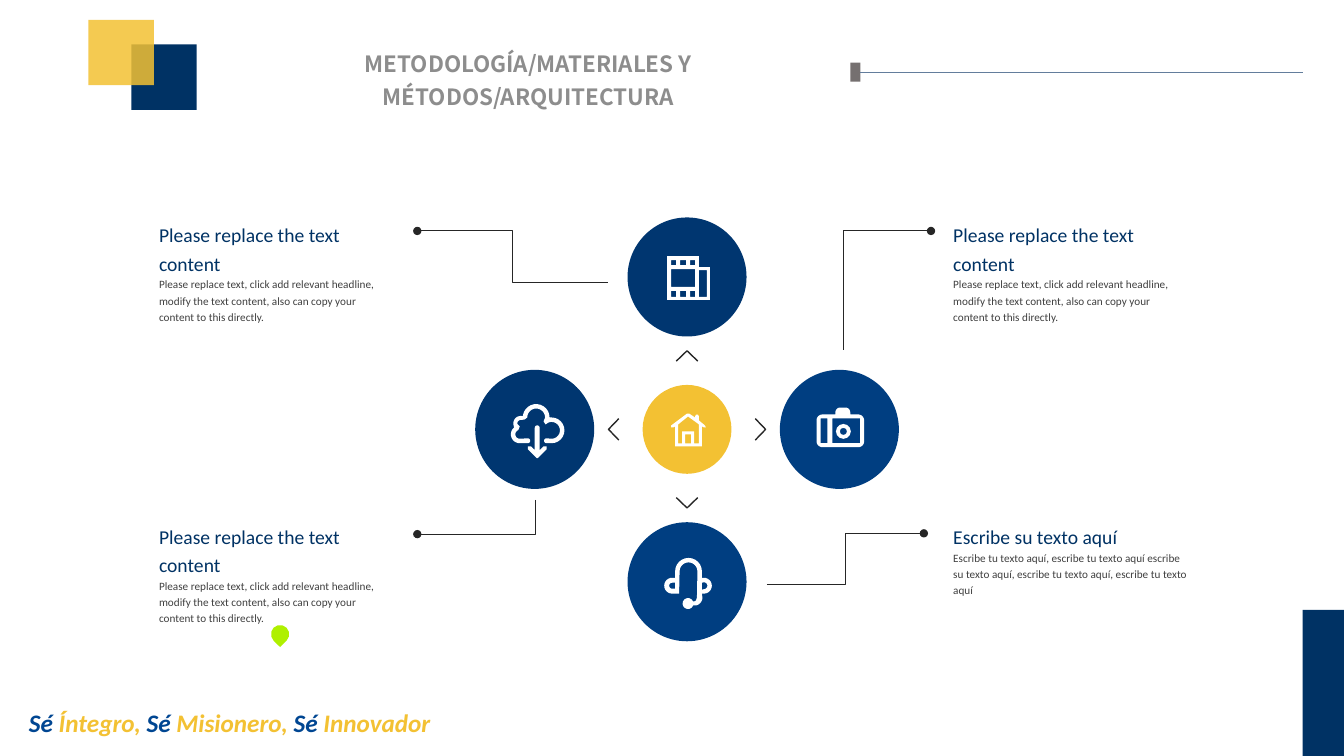
"""Build the methodology slide: a hub, four icon circles and their captions."""
from math import cos, radians, sin

from lxml.etree import SubElement
from pptx import Presentation
from pptx.dml.color import RGBColor
from pptx.enum.shapes import MSO_CONNECTOR, MSO_SHAPE
from pptx.enum.text import PP_ALIGN
from pptx.oxml.ns import qn
from pptx.util import Cm, Pt

NAVY = RGBColor(0x00, 0x32, 0x64)
DEEP = RGBColor(0x00, 0x36, 0x70)
BLUE = RGBColor(0x00, 0x3E, 0x81)
ROYAL = RGBColor(0x00, 0x46, 0x92)
GOLD = RGBColor(0xF3, 0xC1, 0x33)
LIME = RGBColor(0xAF, 0xF0, 0x00)
WHITE = RGBColor(0xFF, 0xFF, 0xFF)
INK = RGBColor(0x26, 0x26, 0x26)
TEXT = RGBColor(0x3F, 0x3F, 0x3F)
GREY = RGBColor(0x8D, 0x8D, 0x8D)
STONE = RGBColor(0x75, 0x70, 0x70)
STEEL = RGBColor(0x63, 0x7D, 0x9C)

TITLE = "METODOLOGÍA/MATERIALES Y MÉTODOS/ARQUITECTURA"
MOTTO = [("Sé", ROYAL), (" Íntegro, ", GOLD), ("Sé", ROYAL),
         (" Misionero, ", GOLD), ("Sé", ROYAL), (" Innovador", GOLD)]
HEAD = "Please replace the text content"
BODY = ("Please replace text, click add relevant headline, modify the text "
        "content, also can copy your content to this directly.")
NOTES = [
    (24.03, 5.51, HEAD, BODY),
    (24.03, 13.11, "Escribe su texto aquí",
     "Escribe tu texto aquí, escribe tu texto aquí escribe su texto aquí, "
     "escribe tu texto aquí, escribe tu texto aquí"),
    (4.01, 13.11, HEAD, BODY),
    (4.01, 5.51, HEAD, BODY),
]
ELBOWS = [
    [(15.32, 7.11), (12.93, 7.11), (12.93, 5.82), (10.52, 5.82)],
    [(21.26, 8.81), (21.26, 5.82), (23.47, 5.82)],
    [(19.33, 14.73), (21.31, 14.73), (21.31, 13.44), (23.29, 13.44)],
    [(13.49, 12.6), (13.49, 13.46), (10.52, 13.46)],
]
MID = (17.32, 10.82)
REACH, RING, HUB = 3.84, 3, 2.24
TIP, BASE, WING = 1.98, 1.72, 0.27


def box(left, top, right, low):
    """Return the corners of a rectangle."""
    return [(left, top), (right, top), (right, low), (left, low)]


# Contours hold points (x, y) and arcs (x, y, radius, from, to) in icon units.
FILM = [[
    [(-20, -21), (12, -21), (12, -10), (23, -10), (23, 23), (-20, 23)],
    box(-16, -8, 8, 10), box(12, -7, 20, 20),
    *[box(left, top, right, low)
      for top, low in [(-17, -12), (14, 20)]
      for left, right in [(-16, -11), (-7, -1), (3, 8)]],
]]
CLOUD = [
    [[(1.5, -12, 13.5, 0, -170), (-14, -6, 7.5, -75, -190),
      (-15, 5, 9, -130, -270), (-7, 11.5, 2.5, 90, -90),
      (-15, 5, 4.5, 90, 250), (-15, -3), (-14, -6, 3.5, 170, 280),
      (-10, -10), (1.5, -12, 9, 180, 360), (9, -8), (11, -5),
      (17, 1, 8.5, -110, 90), (12, 11.5, 2.5, 270, 90),
      (17, 1, 13, 90, -90)]],
    [[(9, 17), (5, 21), (2.5, -1.5, 2.5, 0, -180), (0, 21), (-4, 17),
      (-7, 17), (-7, 20), (2, 29), (3, 29), (12, 20), (12, 17)]],
]
PHONE = [[
    [(1.5, -10.5, 13.5, 0, -180), (-12, -4), (-15, 4, 8, -90, -270),
     (-8, 12), (1.5, -10.5, 9, 180, 360), (10, 16), (9, 19), (7, 20),
     (1, 22, 5.5, -25, -340), (7.5, 16, 8, 80, 0), (15, 12),
     (17, 4, 8, 90, -90), (15, -4)],
    [(-12, 7), (-15, 4, 3, 90, 270), (-12, 1)],
    [(15, 1), (17, 4, 3.5, -90, 90), (15, 8)],
]]
CAMERA = [
    [[(-17, -9, 6, 180, 270), (-4, -15), (1, -17, 5, 180, 270),
      (6, -17, 5, 270, 360), (11, -15), (19, -9, 6, 270, 360),
      (19, 12, 6, 0, 90), (-17, 12, 6, 90, 180)],
     box(-19, -11, -12, 14), box(-7, -11, 21, 14)],
    [[(4, 2, 7.5, 0, 360)], [(4, 2, 3.5, 0, 360)]],
]
HOME = [[
    [(18, -4), (12, -9), (12, -13), (11, -15), (9, -15), (8, -13), (8, -12),
     (2, -16), (0, -16), (-16, -4), (-16, -2), (-14, -2), (-12, -3),
     (-12, 17), (15, 17), (15, -3), (17, -2), (19, -2)],
    [(12, 14), (7, 14), (7, 2), (-5, 2), (-5, 14), (-9, 14), (-9, -5),
     (1, -13), (12, -5)],
    box(-2, 5, 4, 14),
]]
DISCS = [(0, -1, RING, DEEP, FILM), (0, 0, HUB, GOLD, HOME),
         (1, 0, RING, BLUE, CAMERA), (-1, 0, RING, DEEP, CLOUD),
         (0, 1, RING, BLUE, PHONE)]


def add(kind, left, top, wide, high, fill):
    """Add a filled preset shape."""
    item = shapes.add_shape(kind, Cm(left), Cm(top), Cm(wide), Cm(high))
    item.shadow.inherit = False
    item.fill.solid()
    item.fill.fore_color.rgb = fill
    item.line.fill.background()
    return item


def trace(loops, close):
    """Build one freeform from loops of points in centimetres."""
    loops = [[(Cm(x), Cm(y)) for x, y in loop] for loop in loops]
    pen = shapes.build_freeform(*loops[0][0], scale=1)
    for place, loop in enumerate(loops):
        if place:
            pen.move_to(*loop[0])
        pen.add_line_segments(loop[1:], close=close)
    item = pen.convert_to_shape()
    item.shadow.inherit = False
    return item


def stroke(points, width):
    """Draw an open ink line."""
    item = trace([points], False)
    item.fill.background()
    item.line.color.rgb = INK
    item.line.width = Pt(width)
    return item


def bend(loop, x, y):
    """Turn icon points and arcs into slide points around a centre."""
    spots = []
    for part in loop:
        if len(part) == 2:
            spots.append(part)
            continue
        left, top, size, start, end = part
        for step in range(13):
            turn = radians(start + (end - start) * step / 12)
            spots.append((left + size * cos(turn), top + size * sin(turn)))
    return [(x + a / 40, y + b / 40) for a, b in spots]


def write(left, top, wide, high, pad, wrap=True):
    """Add a text box and return its frame."""
    frame = shapes.add_textbox(Cm(left), Cm(top), Cm(wide), Cm(high)).text_frame
    frame.word_wrap = wrap
    frame.margin_left = frame.margin_right = Cm(pad[0])
    frame.margin_top = frame.margin_bottom = Cm(pad[1])
    return frame


def style(font, name, size, color):
    """Set the face, size and colour of a font."""
    font.name, font.size = name, Pt(size)
    font.color.rgb = color


deck = Presentation()
deck.slide_width, deck.slide_height = Cm(33.88), Cm(19.05)
shapes = deck.slides.add_slide(deck.slide_layouts[6]).shapes

mark = add(MSO_SHAPE.RECTANGLE, 21.44, 1.58, 0.25, 0.48, STONE)
rule = shapes.add_connector(MSO_CONNECTOR.STRAIGHT, Cm(32.84), Cm(1.82),
                            Cm(21.69), Cm(1.82))
rule.end_connect(mark, 3)
rule.line.color.rgb = STEEL
rule.line.width = Pt(0.75)
SubElement(rule.line._get_or_add_ln().getparent(), qn("a:effectLst"))
add(MSO_SHAPE.RECTANGLE, 3.31, 1.12, 1.65, 1.65, NAVY)
tile = add(MSO_SHAPE.RECTANGLE, 2.23, 0.5, 1.65, 1.65, GOLD)
tint = tile.fill._xPr.find(".//" + qn("a:srgbClr"))
SubElement(tint, qn("a:alpha"), val="85000")
add(MSO_SHAPE.RECTANGLE, 32.84, 15.37, 1.04, 3.68, NAVY)

motto = write(0.48, 17.7, 14.12, 1.02, (0.25, 0.13)).paragraphs[0]
for word, color in MOTTO:
    run = motto.add_run()
    run.text = word
    style(run.font, "Calibri", 18, color)
    run.font.bold = run.font.italic = True

title = write(5.33, 0.81, 15.98, 1.96, (0.33, 0.33)).paragraphs[0]
title.text = TITLE
title.alignment = PP_ALIGN.CENTER
title.line_spacing = 1.2
style(title.runs[0].font, "Noto Sans CJK SC", 16, GREY)
title.runs[0].font.bold = True

for points in ELBOWS:
    elbow = stroke(points, 0.75)
    SubElement(elbow.line._get_or_add_ln(), qn("a:tailEnd"), type="oval")

for dx, dy, size, fill, icon in DISCS:
    x, y = MID[0] + dx * REACH, MID[1] + dy * REACH
    add(MSO_SHAPE.OVAL, x - size / 2, y - size / 2, size, size, fill)
    for loops in icon:
        glyph = trace([bend(loop, x, y) for loop in loops], True)
        glyph.fill.solid()
        glyph.fill.fore_color.rgb = WHITE
        glyph.line.fill.background()
    if dx or dy:
        stroke([(MID[0] + dx * far - dy * side, MID[1] + dy * far + dx * side)
                for far, side in [(BASE, -WING), (TIP, 0), (BASE, WING)]], 1)

for left, top, head, body in NOTES:
    frame = write(left, top, 5.92, 2.64, (0, 0))
    frame.text = head + "\n" + body
    for line, size, color in zip(frame.paragraphs, (14, 8), (NAVY, TEXT)):
        line.line_spacing = 1.2
        style(line.runs[0].font, "Calibri", size, color)

drop = add(MSO_SHAPE.TEAR, 6.83, 15.75, 0.46, 0.46, LIME)
drop.rotation = 135
deck.save("out.pptx")
